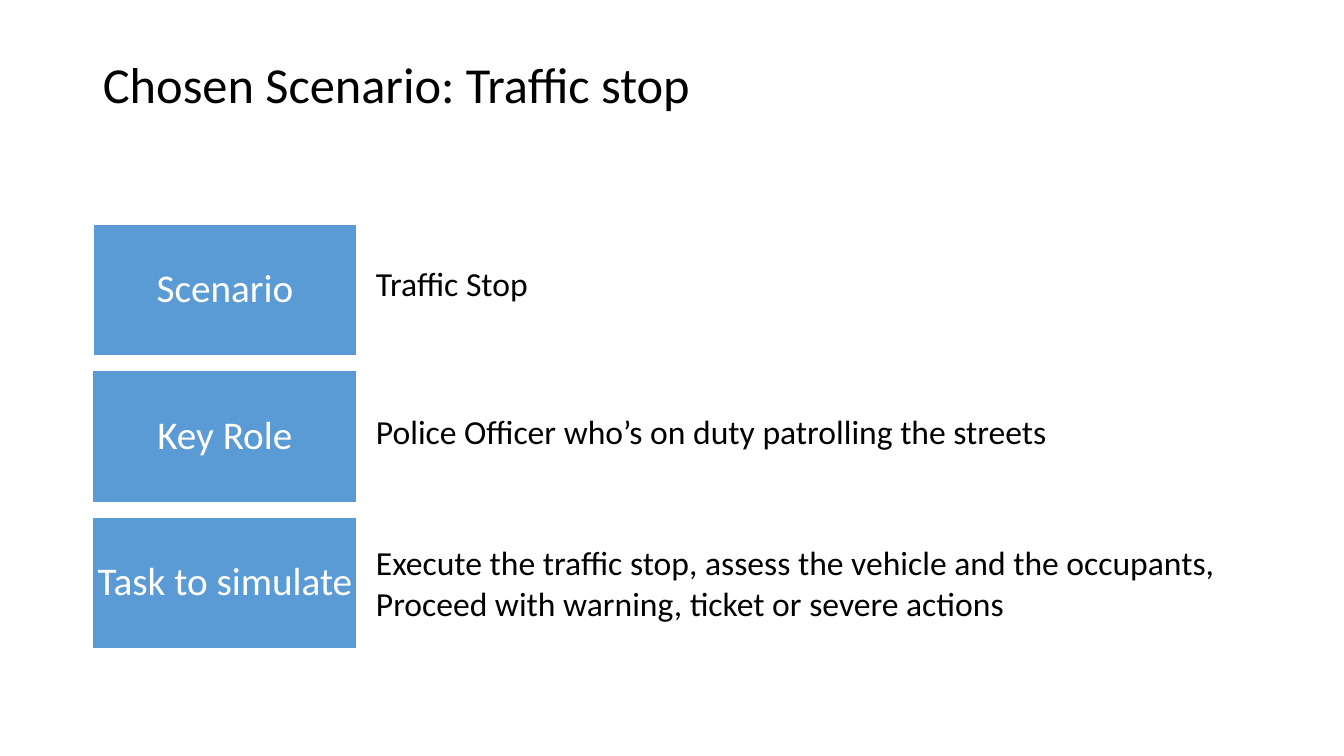
"""Build the traffic stop scenario slide."""
from dataclasses import dataclass

from pptx import Presentation
from pptx.dml.color import RGBColor
from pptx.enum.shapes import MSO_SHAPE
from pptx.enum.text import MSO_ANCHOR, MSO_AUTO_SIZE, PP_ALIGN
from pptx.util import Inches, Pt

TITLE = "Chosen Scenario: Traffic stop"
ROWS = [
    ("Scenario", ["Traffic Stop"], 2.56, 1.73, 0.5, 1.5),
    ("Key Role", ["Police Officer who’s on duty patrolling the streets"],
     4.03, 6.92, 0.5, 1),
    ("Task to simulate",
     ["Execute the traffic stop, assess the vehicle and the occupants,",
      "Proceed with warning, ticket or severe actions"],
     5.33, 8.61, 0.91, 1),
]
LEFT, TOP, WIDE, HIGH, GAP = 0.92, 2.22, 2.62, 1.31, 0.145
NOTE_X = 3.63


@dataclass(frozen=True)
class Theme:
    """Colours, font and type sizes."""
    font: str = "Calibri"
    ink: RGBColor = RGBColor(0, 0, 0)
    paper: RGBColor = RGBColor(255, 255, 255)
    blue: RGBColor = RGBColor(0x5B, 0x9B, 0xD5)
    title: int = 36
    label: int = 28
    body: int = 24


LOOK = Theme()


def write(frame, lines, size, color=LOOK.ink, align=PP_ALIGN.LEFT,
          anchor=MSO_ANCHOR.MIDDLE, space=1.0, wrap=True,
          fit=MSO_AUTO_SIZE.NONE):
    """Fill a text frame with formatted lines."""
    frame.word_wrap = wrap
    frame.auto_size = fit
    frame.vertical_anchor = anchor
    for i, line in enumerate(lines):
        para = frame.add_paragraph() if i else frame.paragraphs[0]
        para.alignment = align
        para.line_spacing = space
        run = para.add_run()
        run.text = line
        run.font.name = LOOK.font
        run.font.size = Pt(size)
        run.font.color.rgb = color


def add_label(slide, text, top, line):
    """Add one blue label box."""
    box = slide.shapes.add_shape(
        MSO_SHAPE.RECTANGLE, Inches(LEFT), Inches(top),
        Inches(WIDE), Inches(HIGH))
    box.shadow.inherit = False
    box.fill.solid()
    box.fill.fore_color.rgb = LOOK.blue
    box.line.color.rgb = LOOK.paper
    box.line.width = Pt(line)
    frame = box.text_frame
    frame.margin_left = frame.margin_right = Inches(0.03)
    frame.margin_top = frame.margin_bottom = Inches(0.03)
    write(frame, [text], LOOK.label, color=LOOK.paper,
          align=PP_ALIGN.CENTER, space=0.9)


def main():
    """Lay out the slide and save it."""
    deck = Presentation()
    deck.slide_width, deck.slide_height = Inches(13.33), Inches(7.5)
    slide = deck.slides.add_slide(deck.slide_layouts[5])
    title = slide.shapes.title
    title.left, title.top = Inches(LEFT), Inches(0.4)
    title.width, title.height = Inches(11.5), Inches(0.93)
    write(title.text_frame, [TITLE], LOOK.title, space=0.9)
    for i, (label, lines, top, wide, high, line) in enumerate(ROWS):
        add_label(slide, label, TOP + i * (HIGH + GAP), line)
        note = slide.shapes.add_textbox(
            Inches(NOTE_X), Inches(top), Inches(wide), Inches(high))
        write(note.text_frame, lines, LOOK.body, anchor=MSO_ANCHOR.TOP,
              wrap=False, fit=MSO_AUTO_SIZE.SHAPE_TO_FIT_TEXT)
    deck.save("out.pptx")


if __name__ == "__main__":
    main()
